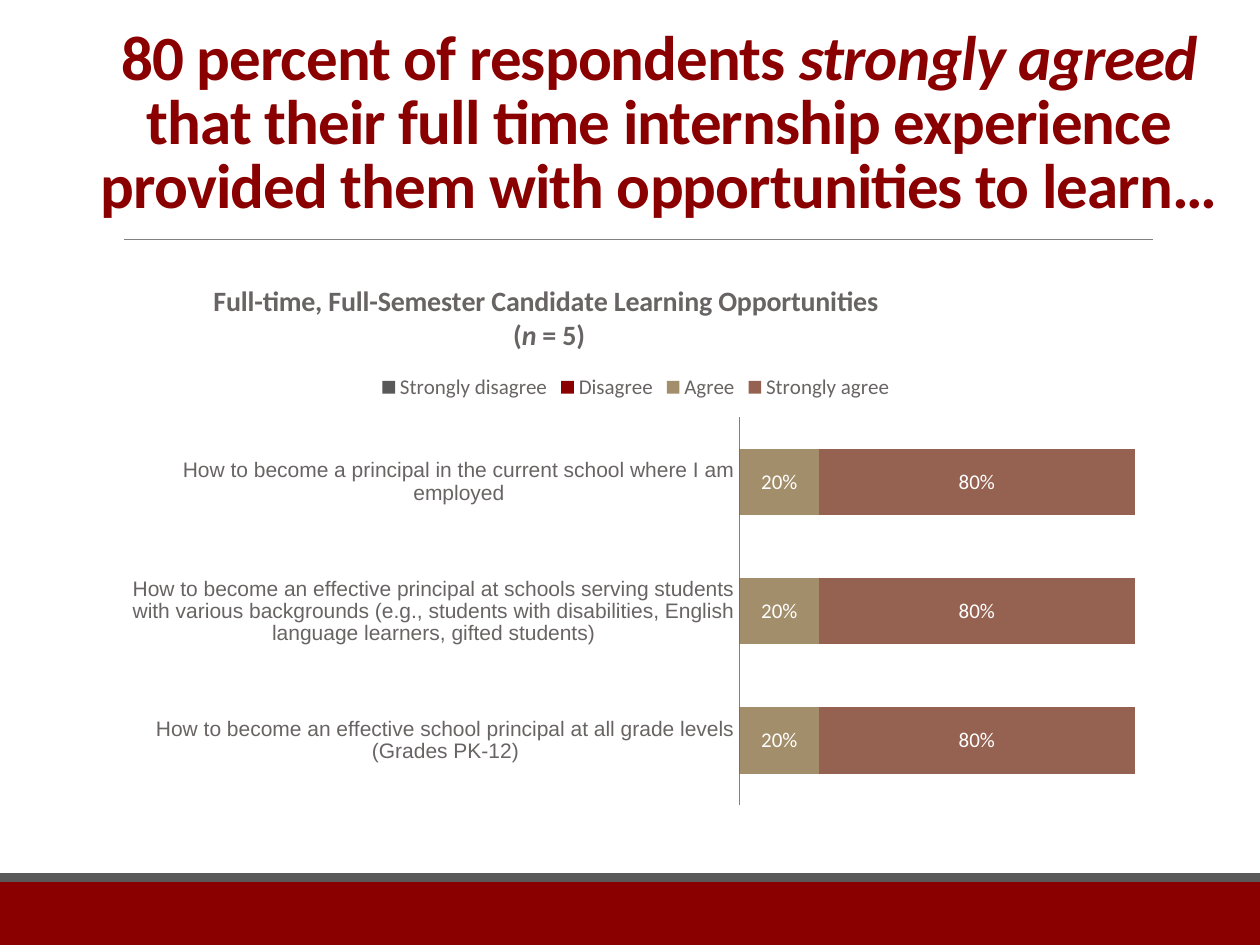
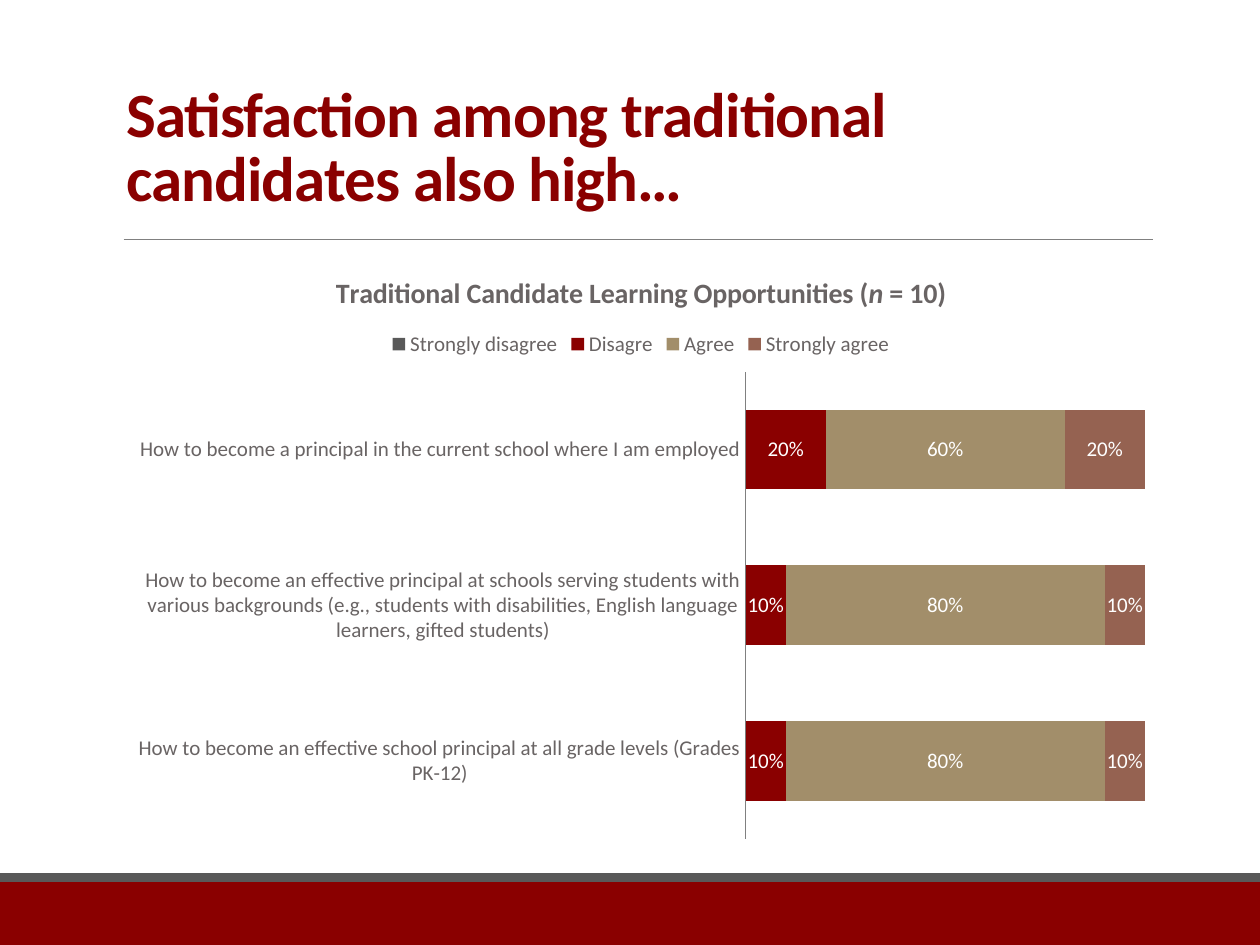
from lxml.etree import SubElement
from pptx import Presentation
from pptx.chart.data import CategoryChartData
from pptx.dml.color import RGBColor
from pptx.enum.chart import XL_CHART_TYPE, XL_LEGEND_POSITION, XL_TICK_MARK
from pptx.enum.shapes import MSO_CONNECTOR, MSO_SHAPE
from pptx.enum.text import MSO_ANCHOR, MSO_AUTO_SIZE, PP_ALIGN
from pptx.oxml.ns import qn
from pptx.util import Cm, Pt

CRIMSON = RGBColor(0x8A, 0x00, 0x00)
CHARCOAL = RGBColor(0x59, 0x59, 0x59)
TAN = RGBColor(0xA2, 0x8E, 0x6A)
BROWN = RGBColor(0x95, 0x62, 0x51)
RULE_GRAY = RGBColor(0x80, 0x80, 0x80)
TEXT_GRAY = RGBColor(0x69, 0x64, 0x64)
WHITE = RGBColor(0xFF, 0xFF, 0xFF)

FONT = "Calibri"
SLIDE_WIDTH, SLIDE_HEIGHT = Cm(25.4), Cm(19.05)
RESPONSE_COLORS = (CHARCOAL, CRIMSON, TAN, BROWN)
QUESTIONS = (
    "How to become an effective school principal at all grade levels (Grades PK-12)",
    "How to become an effective principal at schools serving students with various "
    "backgrounds (e.g., students with disabilities, English language learners, "
    "gifted students)",
    "How to become a principal in the current school where I am employed",
)


def style_font(font, size, color, bold=False, name=FONT):
    font.name, font.size, font.bold = name, Pt(size), bold
    font.color.rgb = color


def add_runs(paragraph, pieces, size, color):
    """Add bold runs from (text, italic) pairs."""
    for text, italic in pieces:
        run = paragraph.add_run()
        run.text = text
        style_font(run.font, size, color, bold=True)
        run.font.italic = italic


def add_band(slide, top, height, color):
    band = slide.shapes.add_shape(MSO_SHAPE.RECTANGLE, 0, top, SLIDE_WIDTH, height)
    band.shadow.inherit = False
    band.fill.solid()
    band.fill.fore_color.rgb = color
    band.line.fill.background()


def add_title_rule(slide):
    rule = slide.shapes.add_connector(
        MSO_CONNECTOR.STRAIGHT, Cm(2.49), Cm(4.83), Cm(23.24), Cm(4.83))
    rule.line.color.rgb = RULE_GRAY
    rule.line.width = Pt(0.5)
    SubElement(rule.element.spPr, qn("a:effectLst"))


def set_title(slide, pieces, box, alignment):
    title = slide.shapes.title
    title.left, title.top, title.width, title.height = box
    frame = title.text_frame
    frame.word_wrap = True
    frame.auto_size = MSO_AUTO_SIZE.NONE
    frame.vertical_anchor = MSO_ANCHOR.BOTTOM
    paragraph = frame.paragraphs[0]
    paragraph.alignment = alignment
    paragraph.line_spacing = 0.85
    add_runs(paragraph, pieces, 36, CRIMSON)
    for run in paragraph.runs:
        run.font._element.set("spc", "-50")


def add_survey_slide(presentation, title, box, alignment):
    slide = presentation.slides.add_slide(presentation.slide_layouts[5])
    add_band(slide, Cm(17.78), Cm(1.27), CRIMSON)
    add_band(slide, Cm(17.6), Cm(0.18), CHARCOAL)
    add_title_rule(slide)
    set_title(slide, title, box, alignment)
    return slide


def place_chart_part(part, index, **fractions):
    """Fix a chart part at fractions of the chart area."""
    for old_layout in part.findall(qn("c:layout")):
        part.remove(old_layout)
    layout = SubElement(part, qn("c:layout"))
    part.insert(index, layout)
    manual = SubElement(layout, qn("c:manualLayout"))
    if "w" in fractions:
        SubElement(manual, qn("c:layoutTarget")).set("val", "inner")
    for axis in "xy":
        SubElement(manual, qn(f"c:{axis}Mode")).set("val", "edge")
    for key, value in fractions.items():
        SubElement(manual, qn(f"c:{key}")).set("val", str(value))


def style_axes(chart, label_font):
    questions = chart.category_axis
    questions.major_tick_mark = XL_TICK_MARK.NONE
    questions.format.line.color.rgb = RULE_GRAY
    questions.format.line.width = Pt(0.75)
    style_font(questions.tick_labels.font, 12, TEXT_GRAY, name=label_font)
    shares = chart.value_axis
    shares.has_major_gridlines = False
    shares.visible = False


def style_bars(plot):
    plot.gap_width, plot.overlap = 95, 100
    plot.vary_by_categories = False
    for series, color in zip(plot.series, RESPONSE_COLORS):
        series.format.fill.solid()
        series.format.fill.fore_color.rgb = color
        if any(series.values):
            labels = series.data_labels
            labels.show_value = True
            labels.number_format, labels.number_format_is_linked = "0%", False
            style_font(labels.font, 12, WHITE)


def add_response_chart(slide, box, title_lines, responses, plot_area, label_font=FONT):
    data = CategoryChartData(number_format="0%")
    data.categories = QUESTIONS
    for name, shares in responses.items():
        data.add_series(name, shares)
    chart = slide.shapes.add_chart(XL_CHART_TYPE.BAR_STACKED_100, *box, data).chart
    chart.font.name = FONT
    frame = chart.chart_title.text_frame
    for number, pieces in enumerate(title_lines):
        paragraph = frame.add_paragraph() if number else frame.paragraphs[0]
        add_runs(paragraph, pieces, 16, TEXT_GRAY)
    chart.has_legend = True
    chart.legend.position = XL_LEGEND_POSITION.TOP
    chart.legend.include_in_layout = False
    style_font(chart.legend.font, 12, TEXT_GRAY)
    style_axes(chart, label_font)
    style_bars(chart.plots[0])
    place_chart_part(chart.element.find(".//" + qn("c:plotArea")), 0, **plot_area)
    return chart


def add_full_time_slide(presentation):
    title = [
        ("80 percent of respondents ", False),
        ("strongly agreed ", True),
        ("that their full time internship experience provided them with "
         "opportunities to learn…", False),
    ]
    slide = add_survey_slide(
        presentation, title, (Cm(1.22), Cm(0.4), Cm(24.13), Cm(4.2)), PP_ALIGN.CENTER)
    chart = add_response_chart(
        slide, (Cm(2.34), Cm(5.28), Cm(20.96), Cm(11.18)),
        [[("Full-time, Full-Semester Candidate Learning Opportunities ", False)],
         [("(", False), ("n", True), (" = 5)", False)]],
        {"Strongly disagree": (0, 0, 0), "Disagree": (0, 0, 0),
         "Agree": (0.2, 0.2, 0.2), "Strongly agree": (0.8, 0.8, 0.8)},
        {"x": 0.6, "y": 0.28, "w": 0.38, "h": 0.7}, label_font="Arial")
    chart_title = chart.element.find(".//" + qn("c:title"))
    place_chart_part(chart_title, 1, x=0.09, y=0.03)


def add_traditional_slide(presentation):
    slide = add_survey_slide(
        presentation, [("Satisfaction among traditional candidates also high…", False)],
        (Cm(2.29), Cm(0.79), Cm(20.96), Cm(3.66)), PP_ALIGN.LEFT)
    add_response_chart(
        slide, (Cm(2.34), Cm(5.08), Cm(21.16), Cm(12.07)),
        [[("Traditional Candidate Learning Opportunities (", False),
          ("n", True), (" = 10)", False)]],
        {"Strongly disagree": (0, 0, 0), "Disagre": (0.1, 0.1, 0.2),
         "Agree": (0.8, 0.8, 0.6), "Strongly agree": (0.1, 0.1, 0.2)},
        {"x": 0.6, "y": 0.2, "w": 0.38, "h": 0.78})


def main():
    presentation = Presentation()
    presentation.slide_width, presentation.slide_height = SLIDE_WIDTH, SLIDE_HEIGHT
    add_full_time_slide(presentation)
    add_traditional_slide(presentation)
    presentation.save("out.pptx")


if __name__ == "__main__":
    main()
